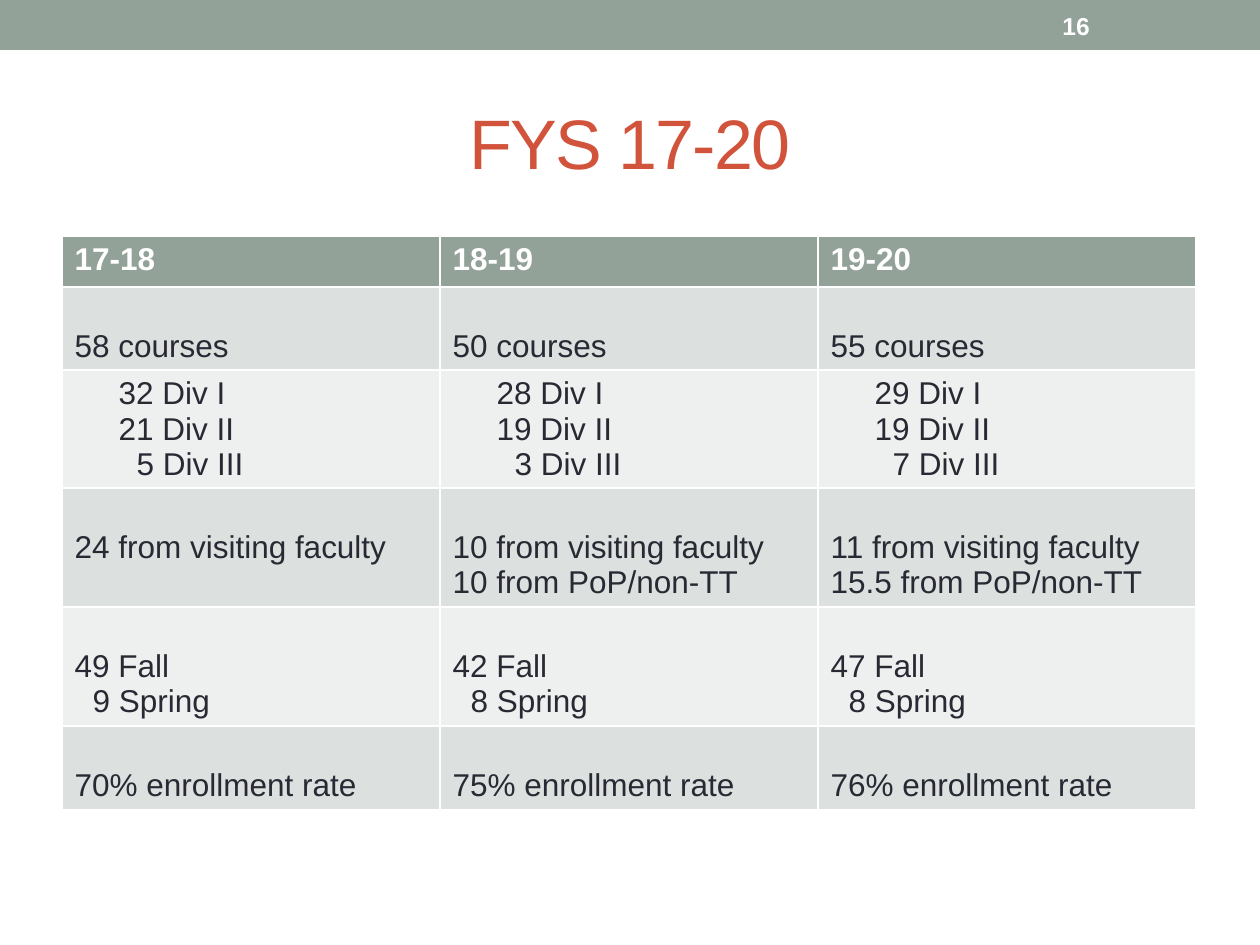
import pptx
import pptx.dml.color
import pptx.enum.shapes
import pptx.enum.text
import pptx.util

# Content: one column per year, one list of lines per cell
TITLE = "FYS 17-20"
PAGE_NUMBER = "16"
YEARS = [
    ("17-18", ["58 courses"], ["32 Div I", "21 Div II", "5 Div III"],
     ["24 from visiting faculty"], ["49 Fall", "9 Spring"],
     ["70% enrollment rate"]),
    ("18-19", ["50 courses"], ["28 Div I", "19 Div II", "3 Div III"],
     ["10 from visiting faculty", "10 from PoP/non-TT"],
     ["42 Fall", "8 Spring"], ["75% enrollment rate"]),
    ("19-20", ["55 courses"], ["29 Div I", "19 Div II", "7 Div III"],
     ["11 from visiting faculty", "15.5 from PoP/non-TT"],
     ["47 Fall", "8 Spring"], ["76% enrollment rate"]),
]
DIVISION_ROW = 2

COLORS = {"sage": "93A299", "title": "D2533C", "text": "292934",
          "white": "FFFFFF", "dark_band": "DCE0DE", "light_band": "EEF0EF"}
FONT = "Arial"

# Layout in px, 126 to the inch
SCALE = 914400 / 126
ROW_HEIGHTS = [51, 83, 118, 119, 119, 82]
COLUMN_WIDTH = 378
TABLE_LEFT, TABLE_TOP = 62, 236
CELL_MARGIN = 6
LINE_HEIGHT = 36
DIVISION_INDENT = 44
DIGIT_INDENT = 18


def emu(px):
    return pptx.util.Emu(round(px * SCALE))


def rgb(name):
    return pptx.dml.color.RGBColor.from_string(COLORS[name])


def style(paragraph, size, color, bold=False):
    font = paragraph.font
    font.name, font.size, font.bold = FONT, pptx.util.Pt(size), bold
    font.color.rgb = rgb(color)


def fill_cell(cell, lines, row):
    cell.fill.solid()
    band = "sage" if row == 0 else "dark_band" if row % 2 else "light_band"
    cell.fill.fore_color.rgb = rgb(band)
    # Rows that open a new topic start one line lower
    opens_topic = row not in (0, DIVISION_ROW)
    cell.margin_top = emu(CELL_MARGIN + LINE_HEIGHT * opens_topic)
    cell.margin_bottom = emu(CELL_MARGIN)
    cell.text = "\n".join(lines)
    for paragraph in cell.text_frame.paragraphs:
        style(paragraph, 18, "text" if row else "white", bold=row == 0)
        # Single-digit counts line up with the units of the lines above
        single_digit = paragraph.text.split()[0] in "0123456789"
        indent = (DIVISION_INDENT * (row == DIVISION_ROW)
                  + DIGIT_INDENT * single_digit)
        if indent:
            properties = paragraph._p.get_or_add_pPr()
            properties.set("marL", str(emu(indent)))
            properties.set("indent", "0")


def main():
    presentation = pptx.Presentation()
    presentation.slide_width, presentation.slide_height = emu(1260), emu(945)
    slide = presentation.slides.add_slide(presentation.slide_layouts[5])
    middle = pptx.enum.text.MSO_ANCHOR.MIDDLE

    # Top bar
    bar = slide.shapes.add_shape(pptx.enum.shapes.MSO_SHAPE.RECTANGLE,
                                 0, 0, emu(1260), emu(50))
    bar.shadow.inherit = False
    bar.fill.solid()
    bar.fill.fore_color.rgb = rgb("sage")
    bar.line.fill.background()

    # Title
    title = slide.shapes.title
    title.left, title.top = emu(63), emu(73)
    title.width, title.height = emu(1134), emu(136)
    title.text_frame.text = TITLE
    title.text_frame.vertical_anchor = middle
    paragraph = title.text_frame.paragraphs[0]
    paragraph.alignment = pptx.enum.text.PP_ALIGN.CENTER
    style(paragraph, 40, "title")
    paragraph.runs[0]._r.get_or_add_rPr().set("spc", "-100")

    # Table
    table = slide.shapes.add_table(
        len(ROW_HEIGHTS), len(YEARS), emu(TABLE_LEFT), emu(TABLE_TOP),
        emu(COLUMN_WIDTH * len(YEARS)), emu(sum(ROW_HEIGHTS))).table
    for row, height in enumerate(ROW_HEIGHTS):
        table.rows[row].height = emu(height)
    for column, (year, *topics) in enumerate(YEARS):
        table.columns[column].width = emu(COLUMN_WIDTH)
        for row, lines in enumerate([[year], *topics]):
            fill_cell(table.cell(row, column), lines, row)

    # Page number
    number = slide.shapes.add_textbox(emu(1050), emu(3), emu(147), emu(45))
    number.text_frame.word_wrap = True
    number.text_frame.vertical_anchor = middle
    number.text_frame.text = PAGE_NUMBER
    style(number.text_frame.paragraphs[0], 14, "white", bold=True)

    presentation.save("out.pptx")


if __name__ == "__main__":
    main()
